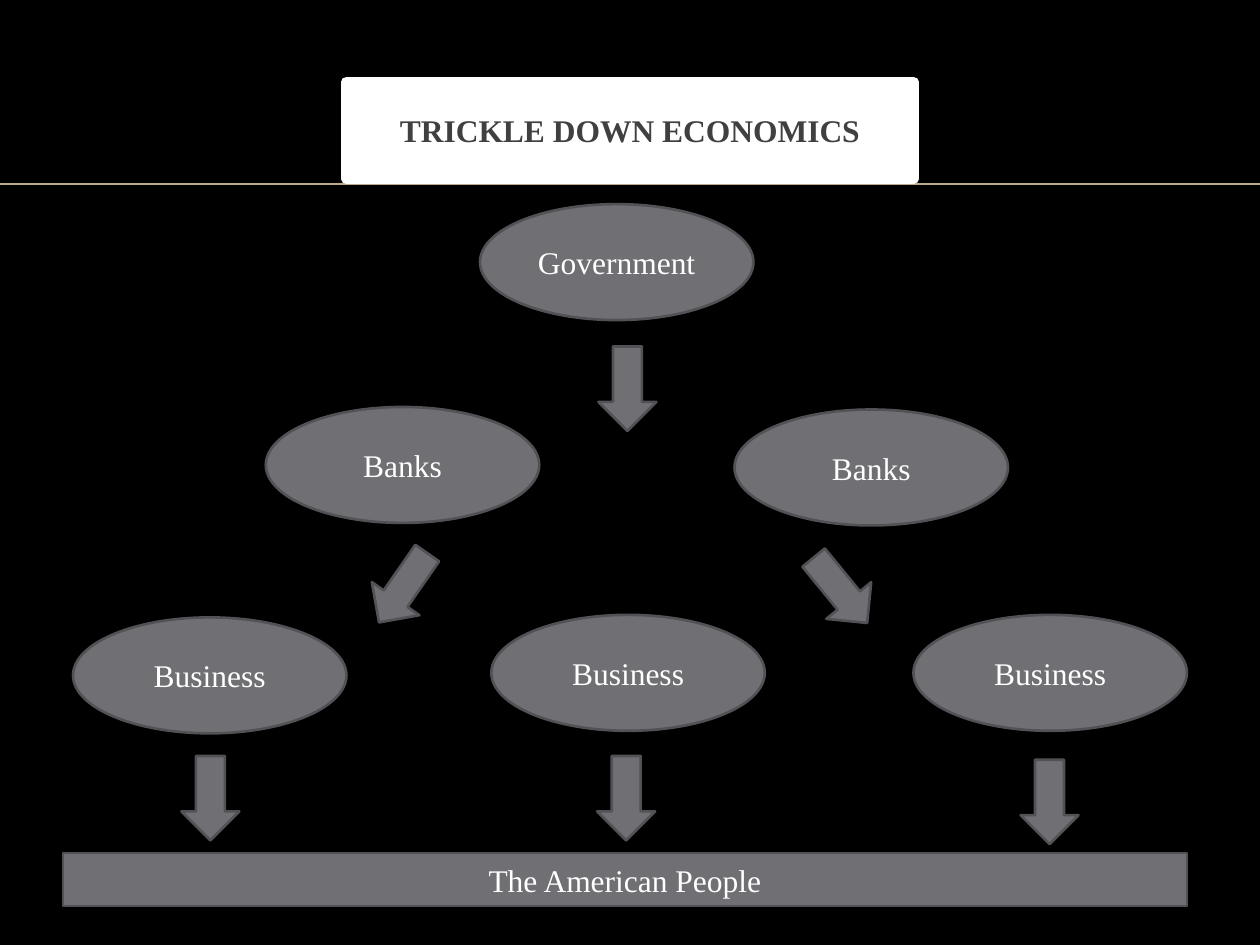
from dataclasses import dataclass

from lxml.etree import SubElement
from pptx import Presentation
from pptx.dml.color import RGBColor
from pptx.enum.shapes import MSO_CONNECTOR as Link, MSO_SHAPE as Kind
from pptx.enum.text import MSO_ANCHOR as Anchor, PP_ALIGN as Align
from pptx.oxml.ns import qn
from pptx.util import Inches, Pt

FONT = "Times New Roman"
COLORS = {
    "back": "000000",
    "rule": "BBAA8A",
    "card": "FFFFFF",
    "title": "404040",
    "fill": "6F6F74",
    "edge": "525256",
    "text": "FFFFFF",
}
NODE_W, NODE_H = 2.17, 0.92
ARROW_W, ARROW_H = 0.46, 0.67


@dataclass
class Node:
    text: str
    left: float
    top: float


@dataclass
class Arrow:
    left: float
    top: float
    turn: float = 0


NODES = [
    Node("Government", 3.81, 1.62),
    Node("Banks", 2.11, 3.23),
    Node("Banks", 5.83, 3.25),
    Node("Business", 3.9, 4.88),
    Node("Business", 0.58, 4.9),
    Node("Business", 7.25, 4.88),
]
ARROWS = [
    Arrow(4.75, 2.75),
    Arrow(2.97, 4.33, 34.8),
    Arrow(4.74, 6),
    Arrow(6.44, 4.35, 320.7),
    Arrow(8.1, 6.03),
    Arrow(1.44, 6),
]


def color(name: str) -> RGBColor:
    return RGBColor.from_string(COLORS[name])


def add_part(slide, kind, left: float, top: float, width: float, height: float,
             fill: str = "fill", edge: str = "edge", weight: float = 1.5):
    part = slide.shapes.add_shape(
        kind, Inches(left), Inches(top), Inches(width), Inches(height))
    part.shadow.inherit = False
    part.fill.solid()
    part.fill.fore_color.rgb = color(fill)
    part.line.color.rgb = color(edge)
    part.line.width = Pt(weight)
    return part


def set_text(part, text: str, ink: str = "text", bold: bool = False) -> None:
    frame = part.text_frame
    frame.text = text
    frame.word_wrap = True
    frame.vertical_anchor = Anchor.MIDDLE
    line = frame.paragraphs[0]
    line.alignment = Align.CENTER
    font = line.runs[0].font
    font.name, font.size, font.bold = FONT, Pt(18), bold
    font.color.rgb = color(ink)


def add_rule(slide, top: float, width: float) -> None:
    rule = slide.shapes.add_connector(
        Link.STRAIGHT, 0, Inches(top), Inches(width), Inches(top))
    rule.line.color.rgb = color("rule")
    rule.line.width = Pt(1)
    SubElement(rule._element.spPr, qn("a:effectLst"))


def main() -> None:
    deck = Presentation()
    deck.slide_width, deck.slide_height = Inches(10), Inches(7.5)
    slide = deck.slides.add_slide(deck.slide_layouts[6])
    back = slide.background.fill
    back.solid()
    back.fore_color.rgb = color("back")

    # Title card on its rule
    add_rule(slide, 1.46, 10)
    card = add_part(slide, Kind.RECTANGLE, 2.75, 0.65, 4.5, 0.77, "card", "card", 6)
    set_text(card, "TRICKLE DOWN ECONOMICS", "title", True)
    card.text_frame.paragraphs[0].space_before = Pt(4)

    # Levels of the economy
    for node in NODES:
        oval = add_part(slide, Kind.OVAL, node.left, node.top, NODE_W, NODE_H)
        set_text(oval, node.text)

    # Base bar
    base = add_part(slide, Kind.RECTANGLE, 0.5, 6.77, 8.92, 0.42)
    set_text(base, "The American People")

    # Flow from level to level
    for arrow in ARROWS:
        part = add_part(slide, Kind.DOWN_ARROW, arrow.left, arrow.top, ARROW_W, ARROW_H)
        part.rotation = arrow.turn

    deck.save("out.pptx")


if __name__ == "__main__":
    main()
